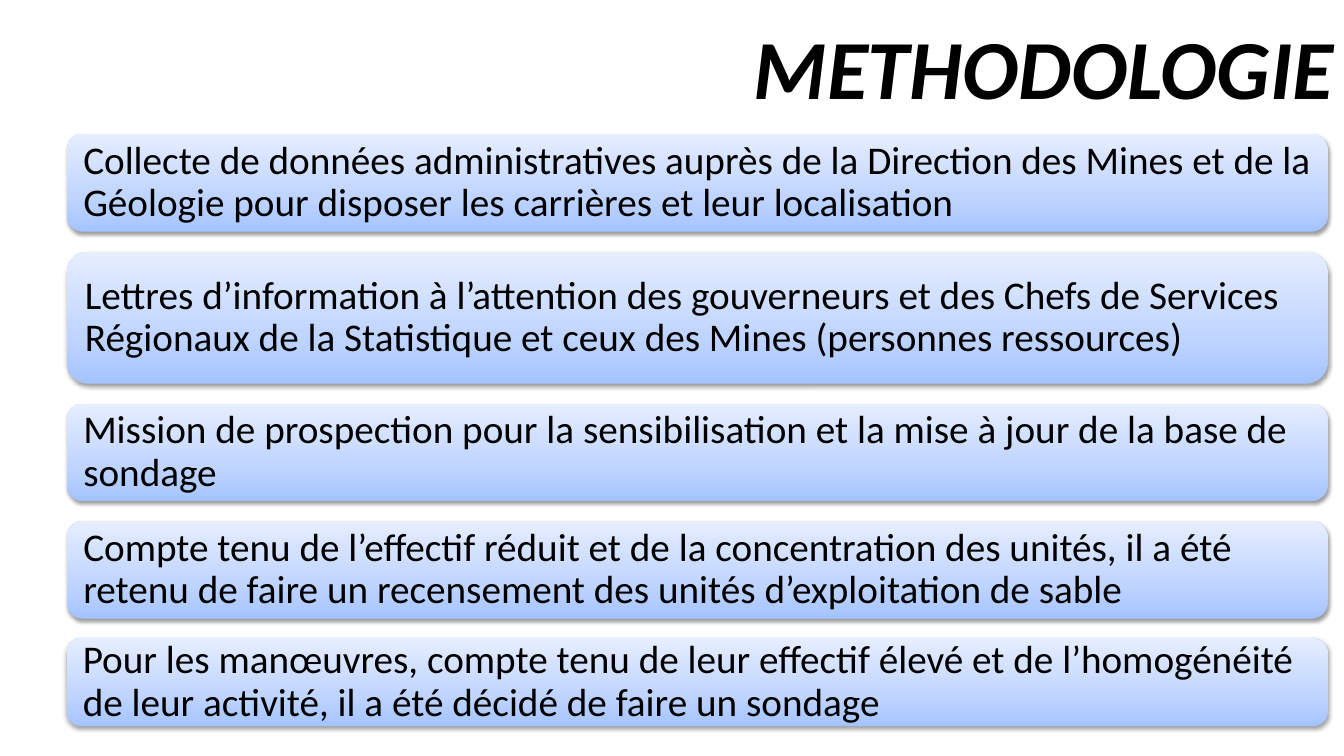
from copy import deepcopy
from dataclasses import dataclass

from lxml import etree
from pptx import Presentation
from pptx.dml.color import RGBColor
from pptx.enum.shapes import MSO_SHAPE
from pptx.enum.text import MSO_ANCHOR, MSO_AUTO_SIZE, PP_ALIGN
from pptx.oxml.ns import qn
from pptx.util import Cm, Pt

ROUNDED = MSO_SHAPE.ROUNDED_RECTANGLE
MIDDLE = MSO_ANCHOR.MIDDLE
NO_FIT = MSO_AUTO_SIZE.NONE
LEFT, RIGHT = PP_ALIGN.LEFT, PP_ALIGN.RIGHT

# Content: each step with the height of its bar in cm
TITLE = "METHODOLOGIE"
STEPS = [
    ("Collecte de données administratives auprès de la Direction des Mines et de la "
     "Géologie pour disposer les carrières et leur localisation", 2.46),
    ("Lettres d’information à l’attention des gouverneurs et des Chefs de Services "
     "Régionaux de la Statistique et ceux des Mines (personnes ressources)", 3.33),
    ("Mission de prospection pour la sensibilisation et la mise à jour de la base de "
     "sondage", 2.46),
    ("Compte tenu de l’effectif réduit et de la concentration des unités, il a été "
     "retenu de faire un recensement des unités d’exploitation de sable", 2.46),
    ("Pour les manœuvres, compte tenu de leur effectif élevé et de l’homogénéité de "
     "leur activité, il a été décidé de faire un sondage", 2.21),
]
BARS_LEFT, BARS_TOP, BARS_WIDTH, BARS_GAP = 1.68, 3.38, 31.78, 0.5


@dataclass(frozen=True)
class Theme:
    font: str = "Calibri"
    text: str = "000000"
    shadow: str = "000000"
    gradient: tuple = ((0, "A4C4FF"), (0.35, "BFD4FF"), (1, "E6EEFF"))
    title_size: int = 60
    step_size: int = 28


THEME = Theme()


def write_text(shape, text, size, align=LEFT, bold=False, italic=False,
               line_spacing=None):
    frame = shape.text_frame
    frame.text = text
    frame.word_wrap = True
    frame.auto_size = NO_FIT
    frame.vertical_anchor = MIDDLE
    paragraph = frame.paragraphs[0]
    paragraph.alignment = align
    if line_spacing:
        paragraph.line_spacing = line_spacing
    font = paragraph.runs[0].font
    font.name, font.size = THEME.font, Pt(size)
    font.bold, font.italic = bold, italic
    font.color.rgb = RGBColor.from_string(THEME.text)


def fill_gradient(shape):
    shape.fill.gradient()
    shape.fill.gradient_angle = 90
    stop_list = shape.fill._xPr.find(qn("a:gradFill")).find(qn("a:gsLst"))
    stop_list.append(deepcopy(stop_list[0]))
    for stop, (position, color) in zip(shape.fill.gradient_stops, THEME.gradient):
        stop.position = position
        stop.color.rgb = RGBColor.from_string(color)


def add_shadow(shape):
    shape.shadow.inherit = False
    effects = shape._element.spPr.find(qn("a:effectLst"))
    shadow = etree.SubElement(effects, qn("a:outerShdw"), blurRad=str(Pt(3.1)),
                              dist=str(Pt(1.6)), dir="5400000", rotWithShape="0")
    color = etree.SubElement(shadow, qn("a:srgbClr"), val=THEME.shadow)
    etree.SubElement(color, qn("a:alpha"), val="38000")


def add_bar(slide, text, top, height):
    bar = slide.shapes.add_shape(ROUNDED, Cm(BARS_LEFT), Cm(top),
                                 Cm(BARS_WIDTH), Cm(height))
    fill_gradient(bar)
    bar.line.fill.background()
    add_shadow(bar)
    frame = bar.text_frame
    frame.margin_left = frame.margin_right = Cm(0.3)
    frame.margin_top = frame.margin_bottom = 0
    write_text(bar, text, THEME.step_size, line_spacing=0.9)


def main():
    presentation = Presentation()
    presentation.slide_width, presentation.slide_height = Cm(33.87), Cm(19.05)
    slide = presentation.slides.add_slide(presentation.slide_layouts[5])

    # Title
    title = slide.shapes.title
    title.left, title.top = Cm(2.05), Cm(0.1)
    title.width, title.height = Cm(31.82), Cm(3.1)
    write_text(title, TITLE, THEME.title_size, align=RIGHT, bold=True, italic=True)

    # Stacked steps
    top = BARS_TOP
    for text, height in STEPS:
        add_bar(slide, text, top, height)
        top += height + BARS_GAP

    presentation.save("out.pptx")


if __name__ == "__main__":
    main()
